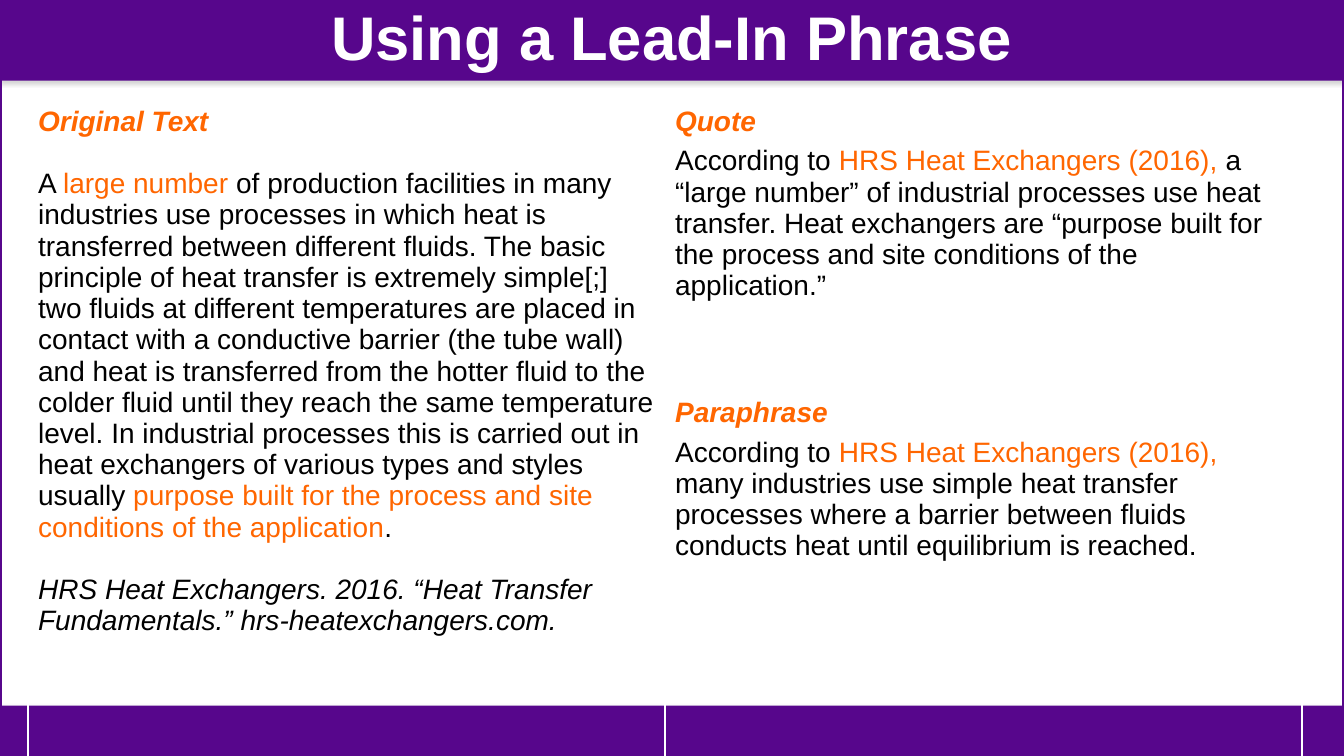
from lxml import etree
from pptx import Presentation
from pptx.dml.color import RGBColor
from pptx.enum.shapes import MSO_SHAPE
from pptx.enum.text import MSO_ANCHOR, PP_ALIGN
from pptx.oxml import parse_xml
from pptx.oxml.ns import nsdecls
from pptx.util import Pt

RECT = MSO_SHAPE.RECTANGLE
MIDDLE = MSO_ANCHOR.MIDDLE
CENTER = PP_ALIGN.CENTER

PURPLE = RGBColor(0x57, 0x06, 0x8C)
ORANGE = RGBColor(0xFF, 0x66, 0x00)
BLACK = RGBColor(0x00, 0x00, 0x00)
WHITE = RGBColor(0xFF, 0xFF, 0xFF)

WIDTH, HEIGHT = 960, 540
BAR_H, FOOTER_H = 57.6, 36
LINE_GAP = 22.3

SOURCE = "HRS Heat Exchangers (2016), "
ORIGINAL = [
    ("A ", BLACK),
    ("large number ", ORANGE),
    ("of production facilities in many industries use processes in which heat is "
     "transferred between different fluids. The basic principle of heat transfer is "
     "extremely simple[;] two fluids at different temperatures are placed in contact "
     "with a conductive barrier (the tube wall) and heat is transferred from the hotter "
     "fluid to the colder fluid until they reach the same temperature level. In "
     "industrial processes this is carried out in heat exchangers of various types and "
     "styles usually ", BLACK),
    ("purpose built for the process and site conditions of the application", ORANGE),
    (".", BLACK),
]
REFERENCE = "HRS Heat Exchangers. 2016. “Heat Transfer Fundamentals.” hrs-heatexchangers.com."
QUOTE = (
    "a “large number” of industrial processes use heat transfer. Heat exchangers are "
    "“purpose built for the process and site conditions of the application.”"
)
PARAPHRASE = (
    "many industries use simple heat transfer processes where a barrier between "
    "fluids conducts heat until equilibrium is reached."
)


def add_run(p, text, size, color, bold=False, italic=False):
    """Append one formatted run to a paragraph."""
    r = p.add_run()
    r.text = text
    r.font.name = "Arial"
    r.font.size = Pt(size)
    r.font.color.rgb = color
    r.font.bold = bold
    r.font.italic = italic


def add_bar(s, left, top, width, height):
    """Draw a purple band with a soft shadow below it."""
    sp = s.shapes.add_shape(RECT, Pt(left), Pt(top), Pt(width), Pt(height))
    sp.fill.solid()
    sp.fill.fore_color.rgb = PURPLE
    sp.line.fill.background()
    sp.shadow.inherit = False
    effects = sp.element.spPr.find("{*}effectLst")
    effects.append(parse_xml(
        f'<a:outerShdw {nsdecls("a")} blurRad="{Pt(3.1)}" dist="{Pt(1.8)}" '
        'dir="5400000" rotWithShape="0"><a:srgbClr val="808080">'
        '<a:alpha val="35000"/></a:srgbClr></a:outerShdw>'))


def add_frame(s, left, top, width, height):
    """Draw the purple outline of the slide."""
    sp = s.shapes.add_shape(RECT, Pt(left), Pt(top), Pt(width), Pt(height))
    sp.fill.background()
    sp.line.color.rgb = PURPLE
    sp.line.width = Pt(2.25)
    sp.shadow.inherit = False


def set_title(s, text, left, top, width, height):
    """Place the title placeholder over the top band."""
    title = s.shapes.title
    title.left, title.top = Pt(left), Pt(top)
    title.width, title.height = Pt(width), Pt(height)
    tf = title.text_frame
    tf.word_wrap = True
    tf.vertical_anchor = MIDDLE
    p = tf.paragraphs[0]
    p.alignment = CENTER
    p.line_spacing = 0.9
    add_run(p, text, 44, WHITE, bold=True)
    title.element.getparent().append(title.element)


def fill_cell(cell, heading, body, gap, reference=None):
    """Write a heading, a body of coloured runs and an optional reference."""
    tf = cell.text_frame
    p = tf.paragraphs[0]
    p.space_after = Pt(gap)
    add_run(p, heading, 20, ORANGE, bold=True, italic=True)
    p = tf.add_paragraph()
    p.space_after = Pt(gap)
    for text, color in body:
        add_run(p, text, 20, color)
    if reference:
        add_run(tf.add_paragraph(), reference, 20, BLACK, italic=True)


def add_comparison(s, left, top, width, height):
    """Lay out the source passage beside its quote and paraphrase."""
    table = s.shapes.add_table(2, 2, Pt(left), Pt(top), Pt(width), Pt(height)).table
    table.first_row = False
    table.horz_banding = False
    for row in table.rows:
        row.height = Pt(height / 2)
    for cell in table.iter_cells():
        cell.fill.background()
    table.cell(0, 0).merge(table.cell(1, 0))
    fill_cell(table.cell(0, 0), "Original Text", ORIGINAL, LINE_GAP, REFERENCE)
    for row, (heading, text) in enumerate([("Quote", QUOTE), ("Paraphrase", PARAPHRASE)]):
        body = [("According to ", BLACK), (SOURCE, ORANGE), (text, BLACK)]
        fill_cell(table.cell(row, 1), heading, body, 6)


def main():
    """Build the slide and save it."""
    prs = Presentation()
    prs.slide_width, prs.slide_height = Pt(WIDTH), Pt(HEIGHT)
    s = prs.slides.add_slide(prs.slide_layouts[5])
    add_bar(s, 0, 0, WIDTH, BAR_H)
    add_frame(s, 0, 0, WIDTH, HEIGHT)
    add_bar(s, 0, HEIGHT - FOOTER_H, WIDTH, FOOTER_H)
    set_title(s, "Using a Lead-In Phrase", 0, 0, WIDTH, BAR_H)
    add_comparison(s, 20, 72, 910, 416)
    prs.save("out.pptx")


if __name__ == "__main__":
    main()
